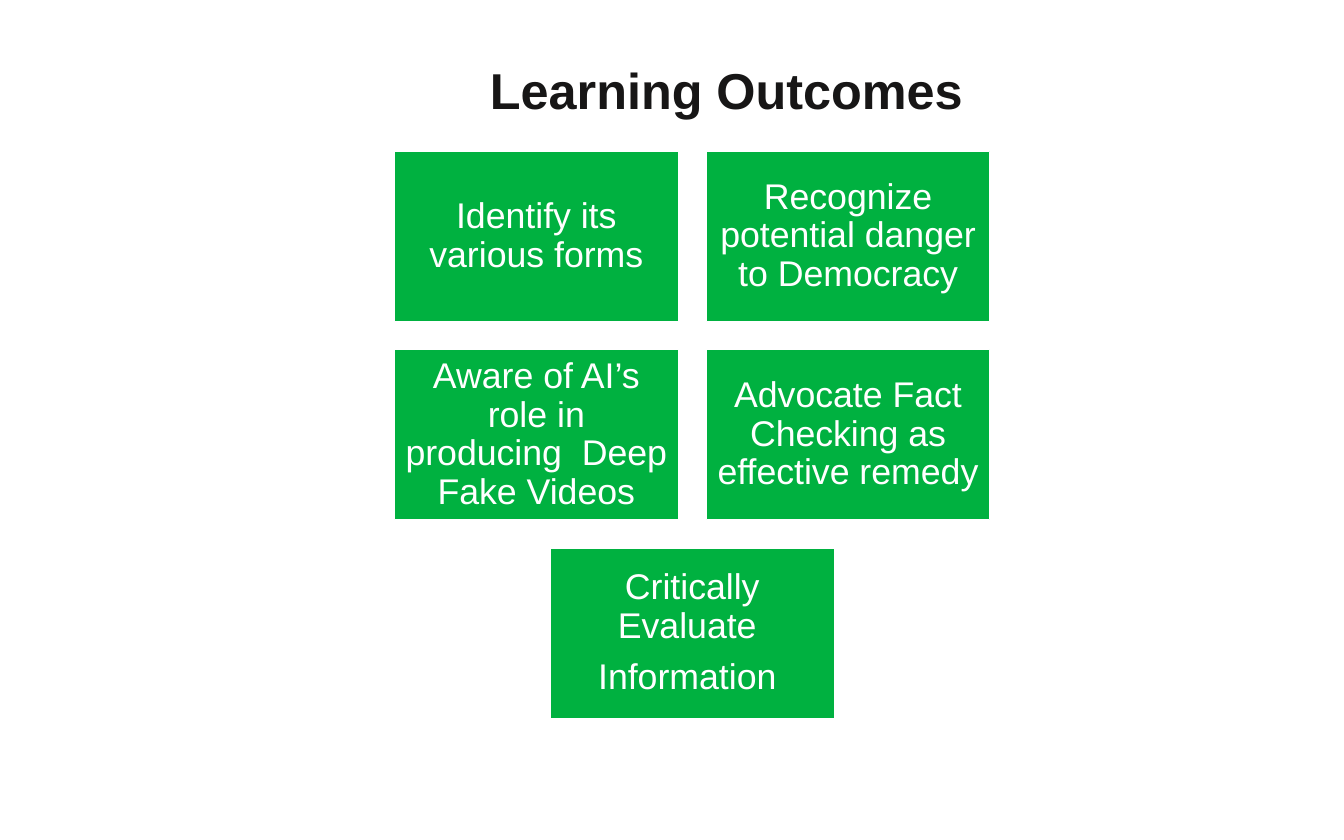
from pptx import Presentation
from pptx.dml.color import RGBColor
from pptx.enum.shapes import MSO_SHAPE
from pptx.enum.text import MSO_ANCHOR, MSO_AUTO_SIZE, PP_ALIGN
from pptx.util import Cm, Pt

GREEN = RGBColor(0x00, 0xB1, 0x40)
WHITE = RGBColor(0xFF, 0xFF, 0xFF)
INK = RGBColor(0x17, 0x16, 0x16)
FONT = "Arial"
ROWS = [
    [["Identify its various forms"],
     ["Recognize potential danger to Democracy"]],
    [["Aware of AI’s role in producing  Deep Fake Videos"],
     ["Advocate Fact Checking as effective remedy"]],
    [["Critically Evaluate ", "Information "]],
]


def add_run(p, text, size, color, bold=False):
    """Add one formatted run to a paragraph."""
    r = p.add_run()
    r.text = text
    r.font.name = FONT
    r.font.size = Pt(size)
    r.font.bold = bold
    r.font.color.rgb = color


def add_title(s, text, left, top, width, height):
    """Place the title placeholder in the given box."""
    sp = s.shapes.title
    sp.left, sp.top, sp.width, sp.height = left, top, width, height
    tf = sp.text_frame
    tf.word_wrap = False
    tf.auto_size = MSO_AUTO_SIZE.SHAPE_TO_FIT_TEXT
    tf.vertical_anchor = MSO_ANCHOR.TOP
    p = tf.paragraphs[0]
    p.alignment = PP_ALIGN.LEFT
    add_run(p, text, 48, INK, bold=True)


def add_card(s, lines, left, top, width, height):
    """Draw one green outcome card with centred text."""
    sp = s.shapes.add_shape(MSO_SHAPE.RECTANGLE, left, top, width, height)
    sp.shadow.inherit = False
    sp.fill.solid()
    sp.fill.fore_color.rgb = GREEN
    sp.line.color.rgb = WHITE
    sp.line.width = Pt(0.85)
    tf = sp.text_frame
    tf.word_wrap = True
    tf.vertical_anchor = MSO_ANCHOR.MIDDLE
    tf.margin_left = tf.margin_right = tf.margin_top = tf.margin_bottom = Cm(0.34)
    for i, line in enumerate(lines):
        p = tf.add_paragraph() if i else tf.paragraphs[0]
        p.alignment = PP_ALIGN.CENTER
        p.line_spacing = 0.9
        p.space_after = Pt(11.9)
        add_run(p, line, 34, WHITE)


def add_cards(s, rows, left, top, width, height):
    """Lay out rows of equal cards, each row centred in the box."""
    gap = Cm(0.95)
    card_w = (width - gap) // 2
    card_h = (height - gap * (len(rows) - 1)) // len(rows)
    for i, row in enumerate(rows):
        row_w = len(row) * (card_w + gap) - gap
        x = left + (width - row_w) // 2
        y = top + i * (card_h + gap)
        for j, lines in enumerate(row):
            add_card(s, lines, x + j * (card_w + gap), y, card_w, card_h)


def main():
    """Build and save the slide."""
    prs = Presentation()
    prs.slide_width, prs.slide_height = Cm(45.16), Cm(28.22)
    s = prs.slides.add_slide(prs.slide_layouts[5])
    add_cards(s, ROWS, Cm(13.26), Cm(5.08), Cm(20), Cm(19.05))
    add_title(s, "Learning Outcomes", Cm(16.21), Cm(1.85), Cm(16.59), Cm(2.31))
    prs.save("out.pptx")


if __name__ == "__main__":
    main()
